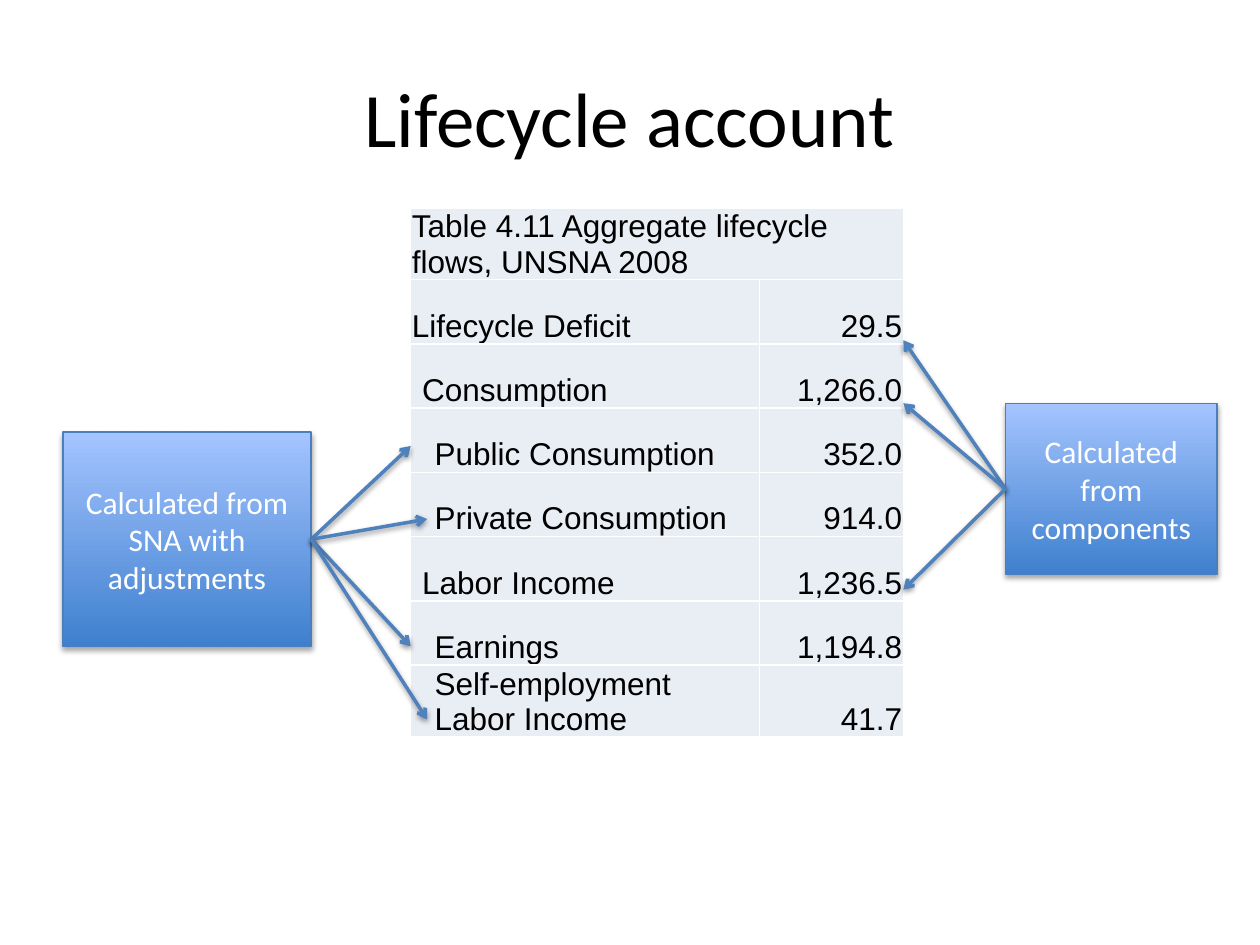
from lxml import etree
from pptx import Presentation
from pptx.dml.color import RGBColor
from pptx.enum.shapes import MSO_CONNECTOR, MSO_SHAPE
from pptx.enum.text import MSO_ANCHOR, PP_ALIGN
from pptx.oxml.ns import qn
from pptx.util import Inches, Pt

LEFT, CENTER, RIGHT = PP_ALIGN.LEFT, PP_ALIGN.CENTER, PP_ALIGN.RIGHT
MIDDLE, BOTTOM = MSO_ANCHOR.MIDDLE, MSO_ANCHOR.BOTTOM
RECTANGLE, STRAIGHT = MSO_SHAPE.RECTANGLE, MSO_CONNECTOR.STRAIGHT
SIDE_LEFT, SIDE_RIGHT = 1, 3
TITLE_ONLY = 5

# Content
TITLE = "Lifecycle account"
CAPTION = "Table 4.11 Aggregate lifecycle flows, UNSNA 2008"
FLOWS = [  # label, value, indent level
    ("Lifecycle Deficit", "29.5", 0),
    ("Consumption", "1,266.0", 1),
    ("Public Consumption", "352.0", 2),
    ("Private Consumption", "914.0", 2),
    ("Labor Income", "1,236.5", 1),
    ("Earnings", "1,194.8", 2),
    ("Self-employment Labor Income", "41.7", 2),
]
SOURCES = [  # box text, box position, side the arrows leave from, arrow tips
    {"text": "Calculated from components", "at": (7.98, 3.2, 1.68, 1.36),
     "side": SIDE_LEFT, "tips": [(7.17, 2.7), (7.17, 3.2), (7.17, 4.68)]},
    {"text": "Calculated from SNA with adjustments", "at": (0.5, 3.43, 1.97, 1.7),
     "side": SIDE_RIGHT,
     "tips": [(3.26, 3.54), (3.39, 4.12), (3.26, 5.13), (3.39, 5.71)]},
]

# Layout in inches
TITLE_AT = (0.5, 0.3, 9, 1.25)
TABLE_AT = (3.26, 1.65, 3.91, 4.14)
COLUMN_WIDTHS = (2.77, 1.14)
END_ROW, INNER_ROW = 0.54, 0.51
INDENTS = (0.01, 0.09, 0.19)

THEME = {
    "title": {"name": "Calibri", "size": Pt(44), "color": "000000"},
    "table": {"name": "Arial", "size": Pt(18), "color": "000000"},
    "box": {"name": "Calibri", "size": Pt(18), "color": "FFFFFF"},
    "cell": "E9EDF4",
    "border": "FFFFFF",
    "gradient": ("3F80CE", "A4C4FF"),
    "outline": "4B7EBC",
    "arrow": "4F81BD",
    "box_shadow": {"alpha": 35, "blur": 3.1, "distance": 1.8},
    "arrow_shadow": {"alpha": 38, "blur": 3.1, "distance": 1.6},
}


def rgb(value):
    return RGBColor.from_string(value)


def inches(values):
    return [Inches(value) for value in values]


def write(frame, text, style, align):
    frame.text = text
    paragraph = frame.paragraphs[0]
    paragraph.alignment = align
    for key, value in THEME[style].items():
        if key == "color":
            paragraph.font.color.rgb = rgb(value)
        else:
            setattr(paragraph.font, key, value)


def add_element(parent, tag, **attributes):
    return etree.SubElement(parent, qn(tag), {k: str(v) for k, v in attributes.items()})


def add_shadow(properties, style):
    effects = properties.find(qn("a:effectLst"))
    if effects is None:
        effects = add_element(properties, "a:effectLst")
    shadow = add_element(effects, "a:outerShdw", blurRad=int(Pt(style["blur"])),
                         dist=int(Pt(style["distance"])), dir=90 * 60000, rotWithShape=0)
    color = add_element(shadow, "a:srgbClr", val="000000")
    add_element(color, "a:alpha", val=style["alpha"] * 1000)


def format_cell(cell, text, align, indent=INDENTS[0]):
    write(cell.text_frame, text, "table", align)
    layout = {"vertical_anchor": BOTTOM, "margin_left": Inches(indent),
              "margin_top": Inches(0.01), "margin_right": Inches(0.01), "margin_bottom": 0}
    for key, value in layout.items():
        setattr(cell, key, value)


def finish_cell(cell):
    properties = cell._tc.get_or_add_tcPr()
    for side in ("a:lnL", "a:lnR", "a:lnT", "a:lnB"):
        line = add_element(properties, side, w=int(Pt(1)))
        add_element(add_element(line, "a:solidFill"), "a:srgbClr", val=THEME["border"])
    cell.fill.solid()
    cell.fill.fore_color.rgb = rgb(THEME["cell"])


def add_flow_table(slide):
    row_count = len(FLOWS) + 1
    table = slide.shapes.add_table(row_count, 2, *inches(TABLE_AT)).table
    table.first_row = table.horz_banding = False
    for column, width in zip(table.columns, COLUMN_WIDTHS):
        column.width = Inches(width)
    for index, row in enumerate(table.rows):
        row.height = Inches(END_ROW if index in (0, row_count - 1) else INNER_ROW)

    table.cell(0, 0).merge(table.cell(0, 1))
    format_cell(table.cell(0, 0), CAPTION, LEFT)
    for index, (label, value, level) in enumerate(FLOWS, start=1):
        format_cell(table.cell(index, 0), label, LEFT, INDENTS[level])
        format_cell(table.cell(index, 1), value, RIGHT)
    for cell in table.iter_cells():
        finish_cell(cell)


def add_source_box(slide, text, at):
    box = slide.shapes.add_shape(RECTANGLE, *inches(at))
    box.fill.gradient()
    box.fill.gradient_angle = 90
    for stop, color, position in zip(box.fill.gradient_stops, THEME["gradient"], (0, 1)):
        stop.color.rgb = rgb(color)
        stop.position = position
    box.line.color.rgb = rgb(THEME["outline"])
    box.line.width = Pt(0.75)
    box.shadow.inherit = False
    add_shadow(box._element.spPr, THEME["box_shadow"])
    box.text_frame.word_wrap = True
    box.text_frame.vertical_anchor = MIDDLE
    write(box.text_frame, text, "box", CENTER)
    return box


def add_arrow(slide, box, side, tip):
    end = inches(tip)
    arrow = slide.shapes.add_connector(STRAIGHT, *end, *end)
    arrow.begin_connect(box, side)
    arrow.line.color.rgb = rgb(THEME["arrow"])
    arrow.line.width = Pt(2)
    properties = arrow._element.spPr
    add_element(properties.find(qn("a:ln")), "a:tailEnd", type="arrow")
    add_shadow(properties, THEME["arrow_shadow"])


def main():
    deck = Presentation()
    deck.slide_width, deck.slide_height = inches((10, 7.5))
    slide = deck.slides.add_slide(deck.slide_layouts[TITLE_ONLY])

    # Title
    title = slide.shapes.title
    title.left, title.top, title.width, title.height = inches(TITLE_AT)
    title.text_frame.vertical_anchor = MIDDLE
    write(title.text_frame, TITLE, "title", CENTER)

    # Table, then each source box with its arrows
    add_flow_table(slide)
    for source in SOURCES:
        box = add_source_box(slide, source["text"], source["at"])
        for tip in source["tips"]:
            add_arrow(slide, box, source["side"], tip)

    deck.save("out.pptx")


if __name__ == "__main__":
    main()
